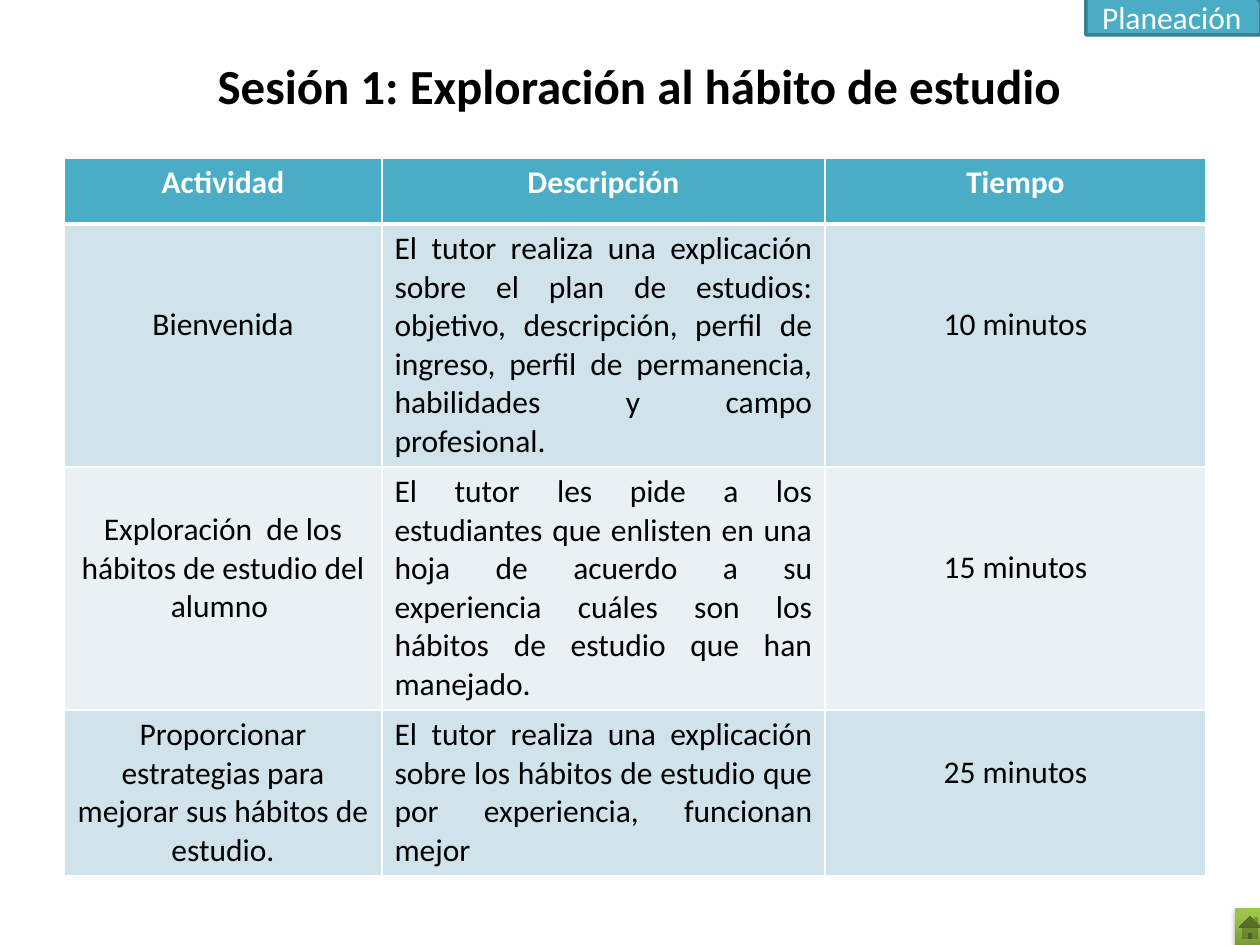
from copy import deepcopy

from lxml.etree import fromstring
from pptx import Presentation
from pptx.dml.color import RGBColor
from pptx.enum.shapes import MSO_SHAPE
from pptx.enum.text import MSO_ANCHOR, PP_ALIGN
from pptx.oxml.ns import nsdecls
from pptx.util import Emu, Pt

SCALE = 914400 / 126
INSET, LINE = 6, 38
TEAL, WHITE, BLACK = "4BACC6", "FFFFFF", "000000"
BANDS = ("D0E3EA", "E9F1F5")
CENTER, JUSTIFY = PP_ALIGN.CENTER, PP_ALIGN.JUSTIFY

HEADS = ("Actividad", "Descripción", "Tiempo")
WIDTHS = (318, 443, 381)
HEIGHTS = (66, 243, 243, 166)
# Each cell: text, alignment, lines left free above it
ROWS = (
    (("Bienvenida", CENTER, 2),
     ("El tutor realiza una explicación sobre el plan de estudios: objetivo, "
      "descripción, perfil de ingreso, perfil de permanencia, habilidades y "
      "campo profesional.", JUSTIFY, 0),
     ("10 minutos", CENTER, 2)),
    (("Exploración  de los hábitos de estudio del alumno ", CENTER, 1),
     ("El tutor les pide a los estudiantes que enlisten en una hoja de acuerdo "
      "a su experiencia cuáles son los hábitos de estudio que han manejado.",
      JUSTIFY, 0),
     ("15 minutos", CENTER, 2)),
    (("Proporcionar estrategias para mejorar sus hábitos de estudio.", CENTER, 0),
     ("El tutor realiza una explicación sobre los hábitos de estudio que por "
      "experiencia, funcionan mejor", JUSTIFY, 0),
     ("25 minutos", CENTER, 1)),
)


def px(n):
    return Emu(round(n * SCALE))


def color(code):
    return RGBColor.from_string(code)


def paint(target, code):
    target.fill.solid()
    target.fill.fore_color.rgb = color(code)


class Deck:
    """Holds the text style and the current slide."""

    font = "Calibri"
    size = 18

    def __init__(self):
        self.prs = Presentation()
        self.prs.slide_width, self.prs.slide_height = px(1260), px(945)
        self.slide = self.prs.slides.add_slide(self.prs.slide_layouts[5])

    def label(self, frame, text, tint, align=CENTER, bold=False, size=None):
        frame.text = text
        frame.word_wrap = True
        para = frame.paragraphs[0]
        para.alignment = align
        para.font.name = self.font
        para.font.size = Pt(size or self.size)
        para.font.bold = bold
        para.font.color.rgb = color(tint)

    def title(self, text, x, y, w, h):
        box = self.slide.shapes.title
        box.left, box.top, box.width, box.height = map(px, (x, y, w, h))
        self.label(box.text_frame, text, BLACK, bold=True, size=28)
        box.text_frame.vertical_anchor = MSO_ANCHOR.MIDDLE

    def borders(self, cell, base):
        """Draw white borders, with the bottom one base points wide."""
        props = cell._tc.get_or_add_tcPr()
        for i, side in enumerate("LRTB"):
            width = Pt(base if side == "B" else 1)
            props.insert(i, fromstring(
                f'<a:ln{side} {nsdecls("a")} w="{width}"><a:solidFill>'
                f'<a:srgbClr val="{WHITE}"/></a:solidFill></a:ln{side}>'))

    def cell(self, cell, text, align, free, fill, head=False):
        self.label(cell.text_frame, text, WHITE if head else BLACK, align, head)
        cell.margin_top = px(INSET + free * LINE)
        paint(cell, fill)
        self.borders(cell, 3 if head else 1)

    def table(self, x, y):
        grid = self.slide.shapes.add_table(
            len(HEIGHTS), len(WIDTHS), px(x), px(y),
            px(sum(WIDTHS)), px(sum(HEIGHTS))).table
        for col, width in zip(grid.columns, WIDTHS):
            col.width = px(width)
        for row, height in zip(grid.rows, HEIGHTS):
            row.height = px(height)
        for c, text in enumerate(HEADS):
            self.cell(grid.cell(0, c), text, CENTER, 0, TEAL, True)
        for r, row in enumerate(ROWS):
            for c, item in enumerate(row):
                self.cell(grid.cell(r + 1, c), *item, BANDS[r % 2])

    def shape(self, kind, x, y, w, h):
        item = self.slide.shapes.add_shape(kind, *map(px, (x, y, w, h)))
        item.shadow.inherit = False
        return item

    def tab(self, text, x, y, w, h):
        tab = self.shape(MSO_SHAPE.SNIP_1_RECTANGLE, x, y, w, h)
        paint(tab, TEAL)
        tab.line.color.rgb = color("377F92")
        tab.line.width = Pt(2)
        self.label(tab.text_frame, text, WHITE)
        tab.text_frame.vertical_anchor = MSO_ANCHOR.MIDDLE

    def home(self, x, y, w, h):
        home = self.shape(MSO_SHAPE.ACTION_BUTTON_HOME, x, y, w, h)
        home.line.fill.background()
        home.fill.gradient()
        home.fill.gradient_angle = 90
        last = home.fill.gradient_stops[1]._gs
        last.addnext(deepcopy(last))
        tints = ((0, "779737"), (0.8, "9BC348"), (1, "9DC746"))
        for stop, (place, tint) in zip(home.fill.gradient_stops, tints):
            stop.position = place
            stop.color.rgb = color(tint)
        effects = home._element.spPr.find(
            "{http://schemas.openxmlformats.org/drawingml/2006/main}effectLst")
        effects.append(fromstring(
            f'<a:outerShdw {nsdecls("a")} blurRad="{Pt(3.1)}" dist="{Pt(1.8)}" '
            f'dir="5400000" rotWithShape="0"><a:srgbClr val="{BLACK}">'
            '<a:alpha val="35000"/></a:srgbClr></a:outerShdw>'))


def main():
    deck = Deck()
    deck.title("Sesión 1: Exploración al hábito de estudio", 72, 45, 1134, 79)
    deck.table(64, 158)
    deck.tab("Planeación", 1086, -4, 175, 39)
    deck.home(1235, 908, 30, 39)
    deck.prs.save("out.pptx")


if __name__ == "__main__":
    main()
